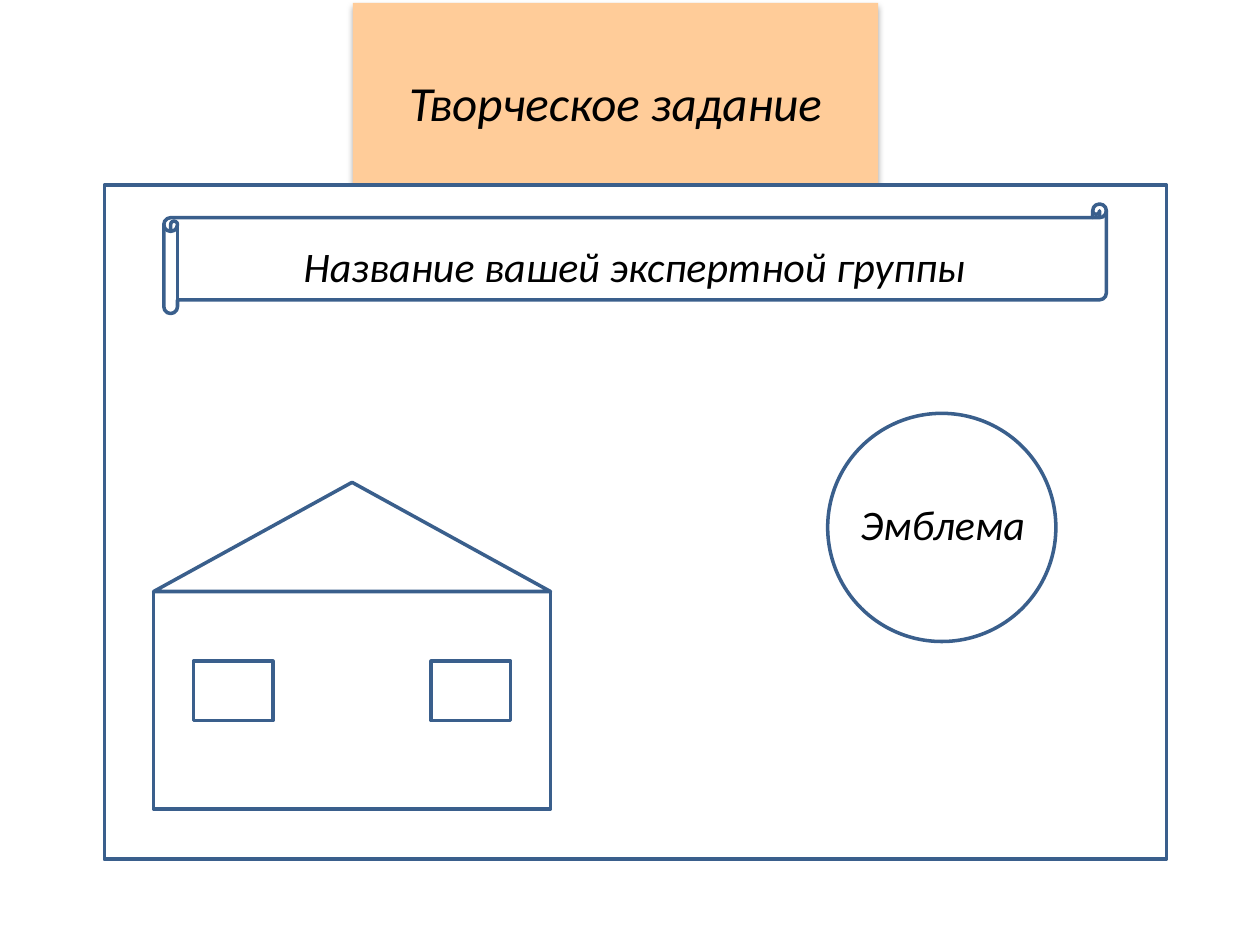
from lxml import etree
from pptx import Presentation
from pptx.dml.color import RGBColor
from pptx.enum import shapes, text
from pptx.oxml.ns import qn
from pptx.util import Pt

COLORS = {"text": "000000", "title": "FFCC99", "paper": "FFFFFF", "line": "3A5F8C", "shadow": "000000"}
FONT = "Calibri"
TITLE = ("Творческое задание", (201.6, 37.6, 300.2, 41))

# Boxes are (left, top, width, height) in points
SHEET = (59.6, 105.8, 607, 385.2)
BANNER = (93.6, 116.6, 538.6, 62.6)
EMBLEM = (473, 236.2, 130.4, 130.4)
HOUSE = (87.8, 338, 226.8, 124.4)
ROOF_HEIGHT = 62.4
WINDOW_SIZE = (45.4, 34)
WINDOW_INSET = (22.8, 39.8)
LABELS = [
    ("Название вашей экспертной группы", (161.3, 133.9, 402.5, 36)),
    ("Эмблема", (456.5, 281.5, 164.2, 36)),
]


def color(name):
    return RGBColor.from_string(COLORS[name])


def write(shape, words, size):
    frame = shape.text_frame
    frame.text = words
    frame.word_wrap = True
    frame.auto_size = text.MSO_AUTO_SIZE.SHAPE_TO_FIT_TEXT
    paragraph = frame.paragraphs[0]
    paragraph.alignment = text.PP_ALIGN.CENTER
    font = paragraph.runs[0].font
    font.name, font.size, font.italic = FONT, Pt(size), True
    font.color.rgb = color("text")


def add_outline(group, kind, box, fill=None):
    shape = group.shapes.add_shape(kind, *map(Pt, box))
    shape.shadow.inherit = False
    if fill:
        shape.fill.solid()
        shape.fill.fore_color.rgb = color(fill)
    else:
        shape.fill.background()
    shape.line.color.rgb = color("line")
    shape.line.width = Pt(2)


def add_title(slide):
    words, box = TITLE
    title = slide.shapes.title
    title.left, title.top, title.width, title.height = map(Pt, box)
    title.fill.solid()
    title.fill.fore_color.rgb = color("title")
    write(title, words, 28)
    title.shadow.inherit = False
    effects = title._element.spPr.find(qn("a:effectLst"))
    shadow = etree.SubElement(effects, qn("a:outerShdw"), blurRad=str(Pt(3.5)),
                              dist=str(Pt(2.2)), dir="5400000", rotWithShape="0")
    tint = etree.SubElement(shadow, qn("a:srgbClr"), val=COLORS["shadow"])
    etree.SubElement(tint, qn("a:alpha"), val="32000")


def add_house(group):
    left, top, width, height = HOUSE
    add_outline(group, shapes.MSO_SHAPE.RECTANGLE, HOUSE)
    add_outline(group, shapes.MSO_SHAPE.ISOSCELES_TRIANGLE,
                (left, top - ROOF_HEIGHT, width, ROOF_HEIGHT))
    inset_x, inset_y = WINDOW_INSET
    for window_left in (left + inset_x, left + width - inset_x - WINDOW_SIZE[0]):
        add_outline(group, shapes.MSO_SHAPE.RECTANGLE, (window_left, top + inset_y, *WINDOW_SIZE))


def main():
    presentation = Presentation()
    presentation.slide_width, presentation.slide_height = Pt(720), Pt(540)
    slide = presentation.slides.add_slide(presentation.slide_layouts[5])
    add_title(slide)
    group = slide.shapes.add_group_shape()
    add_outline(group, shapes.MSO_SHAPE.RECTANGLE, SHEET, "paper")
    add_outline(group, shapes.MSO_SHAPE.HORIZONTAL_SCROLL, BANNER)
    add_outline(group, shapes.MSO_SHAPE.OVAL, EMBLEM)
    for words, box in LABELS:
        write(group.shapes.add_textbox(*map(Pt, box)), words, 24)
    add_house(group)
    presentation.save("out.pptx")


if __name__ == "__main__":
    main()
